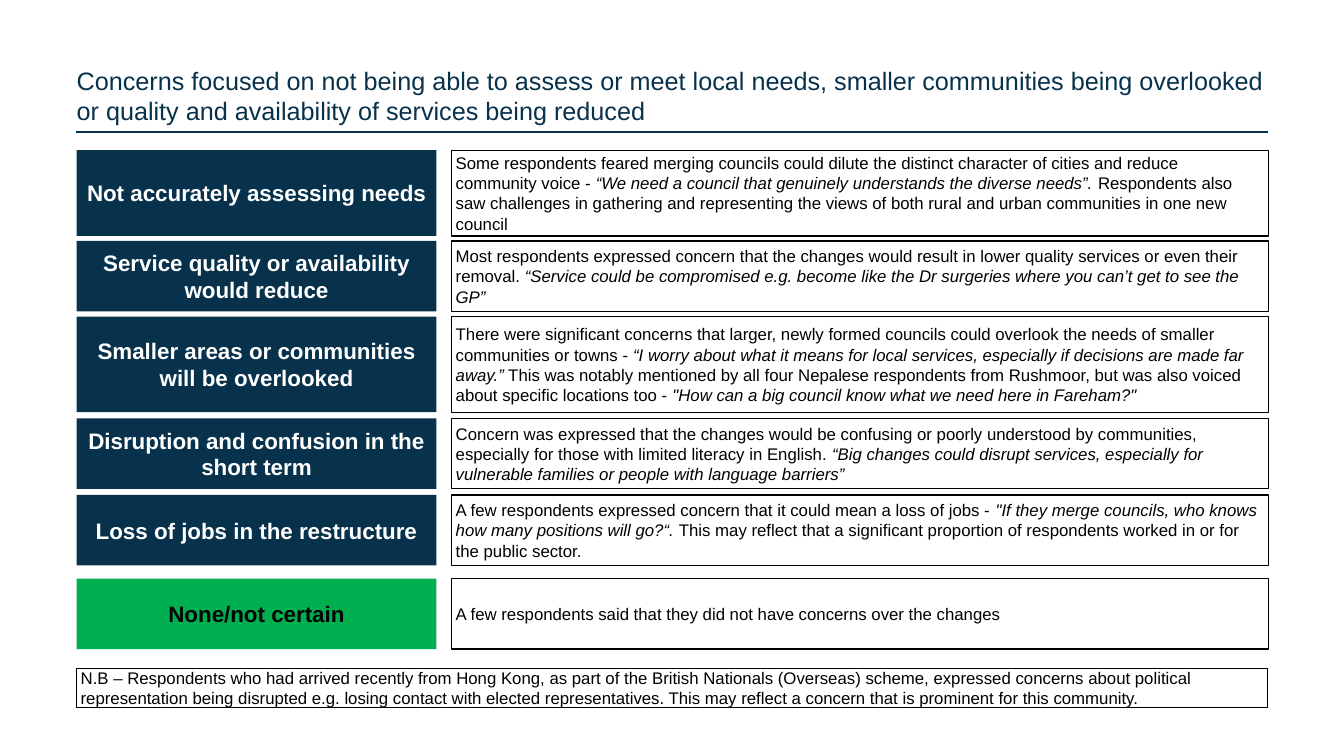
from lxml import etree
from pptx import Presentation
from pptx import util as u
from pptx.dml.color import RGBColor
from pptx.enum import shapes, text
from pptx.oxml.ns import qn

PX = 9144
NAVY = RGBColor(0x08, 0x31, 0x4C)
RULE = RGBColor(0x08, 0x32, 0x4B)
GREEN = RGBColor(0x00, 0xB0, 0x50)
WHITE = RGBColor(0xFF, 0xFF, 0xFF)
BLACK = RGBColor(0x00, 0x00, 0x00)
INK = RGBColor(0x03, 0x03, 0x03)
LEFT, RIGHT = 76, 448

deck = Presentation()
deck.slide_width, deck.slide_height = 1333 * PX, 750 * PX
slide = deck.slides.add_slide(deck.slide_layouts[6])


def write(frame, parts, size, color, pad):
    frame.word_wrap = True
    frame.margin_left = frame.margin_right = pad * PX
    frame.margin_top = frame.margin_bottom = min(pad, 4) * PX
    para = frame.paragraphs[0]
    para.alignment = text.PP_ALIGN.LEFT
    para.font.name = "Arial"
    para.font.size = u.Pt(size)
    para.font.color.rgb = color
    for i, part in enumerate(parts):
        run = para.add_run()
        run.text = part
        if i % 2:
            run.font.italic = True
    return para


def box(x, y, w, h, fill, parts, size, color, pad):
    rect = slide.shapes.add_shape(
        shapes.MSO_SHAPE.RECTANGLE, x * PX, y * PX, w * PX, h * PX)
    rect.shadow.inherit = False
    rect.fill.solid()
    rect.fill.fore_color.rgb = fill
    if fill == WHITE:
        rect.line.color.rgb = BLACK
        rect.line.width = u.Pt(1)
    else:
        rect.line.fill.background()
    rect.text_frame.vertical_anchor = text.MSO_ANCHOR.MIDDLE
    return write(rect.text_frame, parts, size, color, pad)


rule = slide.shapes.add_connector(
    shapes.MSO_CONNECTOR.STRAIGHT, 75 * PX, 131 * PX, 1258 * PX, 131 * PX)
rule.line.color.rgb = RULE
rule.line.width = u.Pt(1.25)
etree.SubElement(rule._element.spPr, qn("a:effectLst"))

title = slide.shapes.add_textbox(LEFT * PX, 65 * PX, 1189 * PX, 61 * PX)
write(title.text_frame, [
    "Concerns focused on not being able to assess or meet local needs, "
    "smaller communities being overlooked or quality and availability of "
    "services being reduced"], 18, NAVY, 0)

rows = [
    (149, 85, "Not accurately assessing needs", [
        "Some respondents feared merging councils could dilute the distinct "
        "character of cities and reduce community voice - ",
        "“We need a council that genuinely understands the diverse needs”. ",
        "Respondents also saw challenges in gathering and representing the "
        "views of both rural and urban communities in one new council"]),
    (239, 70, "Service quality or availability would reduce", [
        "Most respondents expressed concern that the changes would result in "
        "lower quality services or even their removal. ",
        "“Service could be compromised e.g. become like the Dr surgeries "
        "where you can’t get to see the GP”"]),
    (314, 95, "Smaller areas or communities will be overlooked", [
        "There were significant concerns that larger, newly formed councils "
        "could overlook the needs of smaller communities or towns - ",
        "“I worry about what it means for local services, especially if "
        "decisions are made far away.”",
        " This was notably mentioned by all four Nepalese respondents from "
        "Rushmoor, but was also voiced about specific locations too - ",
        '"How can a big council know what we need here in Fareham?"']),
    (415, 70, "Disruption and confusion in the short term", [
        "Concern was expressed that the changes would be confusing or poorly "
        "understood by communities, especially for those with limited "
        "literacy in English. ",
        "“Big changes could disrupt services, especially for vulnerable "
        "families or people with language barriers”"]),
    (491, 70, "Loss of jobs in the restructure", [
        "A few respondents expressed concern that it could mean a loss of "
        "jobs - ",
        '"If they merge councils, who knows how many positions will go?“. ',
        "This may reflect that a significant proportion of respondents "
        "worked in or for the public sector."]),
    (574, 70, "None/not certain", [
        "A few respondents said that they did not have concerns over the "
        "changes"]),
]

for top, high, theme, parts in rows:
    fill, color = (GREEN, INK) if theme.startswith("None") else (NAVY, WHITE)
    label = box(LEFT, top, 357, high, fill, [theme], 16, color, 8)
    label.alignment = text.PP_ALIGN.CENTER
    label.font.bold = True
    box(RIGHT, top, 810, high, WHITE, parts, 12, BLACK, 4)

box(LEFT, 663, 1181, 39, WHITE, [
    "N.B – Respondents who had arrived recently from Hong Kong, as part of "
    "the British Nationals (Overseas) scheme, expressed concerns about "
    "political representation being disrupted e.g. losing contact with "
    "elected representatives. This may reflect a concern that is prominent "
    "for this community."], 12, BLACK, 4)

deck.save("out.pptx")
